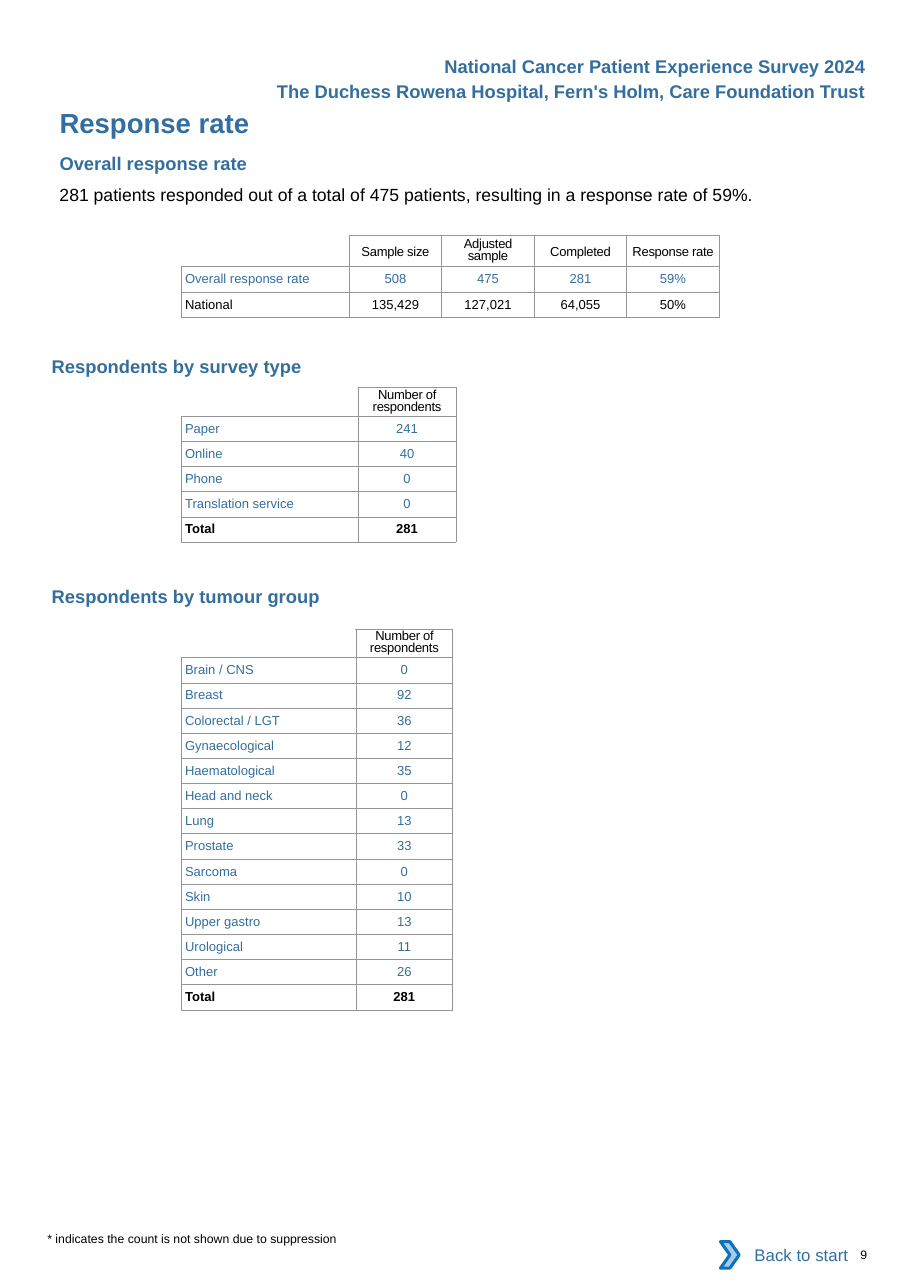
"""Build the response rate page of a patient survey report."""
from lxml import etree
from pptx import Presentation
from pptx.dml.color import RGBColor
from pptx.enum.shapes import MSO_SHAPE
from pptx.enum.text import MSO_ANCHOR, PP_ALIGN
from pptx.oxml.ns import qn
from pptx.util import Inches, Pt

LEFT, CENTER, RIGHT = PP_ALIGN.LEFT, PP_ALIGN.CENTER, PP_ALIGN.RIGHT
TOP, MIDDLE = MSO_ANCHOR.TOP, MSO_ANCHOR.MIDDLE
RECTANGLE, CHEVRON = MSO_SHAPE.RECTANGLE, MSO_SHAPE.CHEVRON

BLUE = RGBColor(0x33, 0x6E, 0x9F)
BLACK = RGBColor(0, 0, 0)
WHITE = RGBColor(0xFF, 0xFF, 0xFF)
ICON_FILL = RGBColor(0xA8, 0xC7, 0xE9)
ICON_LINE = RGBColor(0x0A, 0x74, 0xBB)
GRID = "939598"
FONT = "Arial"

TITLE = "Response rate"
BACK_LINK = "Back to start"

# text, (left, top, width, height), size, colour, bold, alignment
TEXTS = [
    ("National Cancer Patient Experience Survey 2024",
     (3.82, 0.5, 4.04, 0.2), 12, BLUE, True, RIGHT),
    ("The Duchess Rowena Hospital, Fern's Holm, Care Foundation Trust",
     (2.16, 0.73, 5.7, 0.2), 12, BLUE, True, RIGHT),
    ("Overall response rate", (0.54, 1.38, 4.12, 0.2), 12, BLUE, True, LEFT),
    ("281 patients responded out of a total of 475 patients, "
     "resulting in a response rate of 59%.",
     (0.54, 1.67, 7.2, 0.19), 11.5, BLACK, False, LEFT),
    ("Respondents by survey type", (0.47, 3.22, 3, 0.2), 12, BLUE, True, LEFT),
    ("Respondents by tumour group", (0.47, 5.31, 3, 0.2), 12, BLUE, True, LEFT),
    ("* indicates the count is not shown due to suppression",
     (0.43, 11.18, 3, 0.13), 8, BLACK, False, LEFT),
    ("9", (7.81, 11.32, 0.4, 0.13), 8, BLACK, False, LEFT),
]

OVERALL = [
    ("", "Sample size", "Adjusted sample", "Completed", "Response rate"),
    ("Overall response rate", "508", "475", "281", "59%"),
    ("National", "135,429", "127,021", "64,055", "50%"),
]
SURVEY_TYPES = [
    ("", "Number of respondents"),
    ("Paper", "241"),
    ("Online", "40"),
    ("Phone", "0"),
    ("Translation service", "0"),
    ("Total", "281"),
]
TUMOUR_GROUPS = [
    ("", "Number of respondents"),
    ("Brain / CNS", "0"),
    ("Breast", "92"),
    ("Colorectal / LGT", "36"),
    ("Gynaecological", "12"),
    ("Haematological", "35"),
    ("Head and neck", "0"),
    ("Lung", "13"),
    ("Prostate", "33"),
    ("Sarcoma", "0"),
    ("Skin", "10"),
    ("Upper gastro", "13"),
    ("Urological", "11"),
    ("Other", "26"),
    ("Total", "281"),
]
# rows, top, height, header height, label width, value width
TABLES = [
    (OVERALL, 2.14, 0.74, 0.28, 1.52, 0.84),
    (SURVEY_TYPES, 3.52, 1.4, 0.26, 1.6, 0.89),
    (TUMOUR_GROUPS, 5.71, 3.46, 0.26, 1.58, 0.88),
]
TABLE_LEFT = 1.65


def write(tf, text, size, color, bold, align, anchor=TOP):
    tf.text = text
    tf.word_wrap = True
    tf.vertical_anchor = anchor
    tf.margin_left = tf.margin_right = tf.margin_top = tf.margin_bottom = 0
    format_paragraph(tf.paragraphs[0], size, color, bold, align)


def format_paragraph(p, size, color, bold, align):
    p.alignment = align
    for r in p.runs:
        r.font.name = FONT
        r.font.size = Pt(size)
        r.font.bold = bold
        r.font.color.rgb = color


def draw_borders(cell, sides):
    tc_pr = cell._tc.get_or_add_tcPr()
    for side in sides:
        ln = etree.SubElement(tc_pr, qn("a:ln" + side), w=str(Pt(0.5)))
        fill = etree.SubElement(ln, qn("a:solidFill"))
        etree.SubElement(fill, qn("a:srgbClr"), val=GRID)


def format_cell(cell, text, row, col, label):
    draw_borders(cell, "LRTB" if row or col else "RB")
    cell.fill.background()
    cell.vertical_anchor = MIDDLE
    cell.margin_top = cell.margin_bottom = 0
    cell.margin_left = cell.margin_right = Inches(0.03)
    cell.text_frame.text = text
    p = cell.text_frame.paragraphs[0]
    color = BLACK if label in ("", "National", "Total") else BLUE
    format_paragraph(p, 8.5, color, label == "Total", CENTER if col else LEFT)
    if row == 0:
        p.line_spacing = Pt(7.6 if len(text) > 13 else 10)
        for r in p.runs:
            r._r.get_or_add_rPr().set("spc", "-20")
    if not text:
        etree.SubElement(p._p, qn("a:endParaRPr"), sz="850")


def add_grid(s, rows, top, height, header, label_width, value_width):
    n_rows, n_cols = len(rows), len(rows[0])
    width = label_width + value_width * (n_cols - 1)
    table = s.shapes.add_table(n_rows, n_cols, Inches(TABLE_LEFT), Inches(top),
                               Inches(width), Inches(height)).table
    table.first_row = table.horz_banding = False
    for i, column in enumerate(table.columns):
        column.width = Inches(value_width if i else label_width)
    for i, row in enumerate(table.rows):
        row.height = Inches((height - header) / (n_rows - 1) if i else header)
        for j, text in enumerate(rows[i]):
            format_cell(table.cell(i, j), text, i, j, rows[i][0])


def add_back_link(s):
    group = s.shapes.add_group_shape()
    box = group.shapes.add_shape(RECTANGLE, Inches(6.62), Inches(11.18),
                                 Inches(1.08), Inches(0.42))
    box.shadow.inherit = False
    box.fill.solid()
    box.fill.fore_color.rgb = WHITE
    box.line.fill.background()
    write(box.text_frame, BACK_LINK, 11, BLUE, False, RIGHT, MIDDLE)
    icon = group.shapes.add_shape(CHEVRON, Inches(6.54), Inches(11.27),
                                  Inches(0.17), Inches(0.24))
    icon.shadow.inherit = False
    icon.fill.solid()
    icon.fill.fore_color.rgb = ICON_FILL
    icon.line.color.rgb = ICON_LINE
    icon.line.width = Pt(2)


def main():
    prs = Presentation()
    prs.slide_width, prs.slide_height = Inches(8.26), Inches(11.69)
    s = prs.slides.add_slide(prs.slide_layouts[5])
    title = s.shapes.title
    title.left, title.top = Inches(0.54), Inches(0.96)
    title.width, title.height = Inches(4.12), Inches(0.3)
    write(title.text_frame, TITLE, 18, BLUE, True, LEFT)
    for text, box, *style in TEXTS:
        sp = s.shapes.add_textbox(*map(Inches, box))
        write(sp.text_frame, text, *style)
    for grid in TABLES:
        add_grid(s, *grid)
    add_back_link(s)
    prs.save("out.pptx")


if __name__ == "__main__":
    main()
